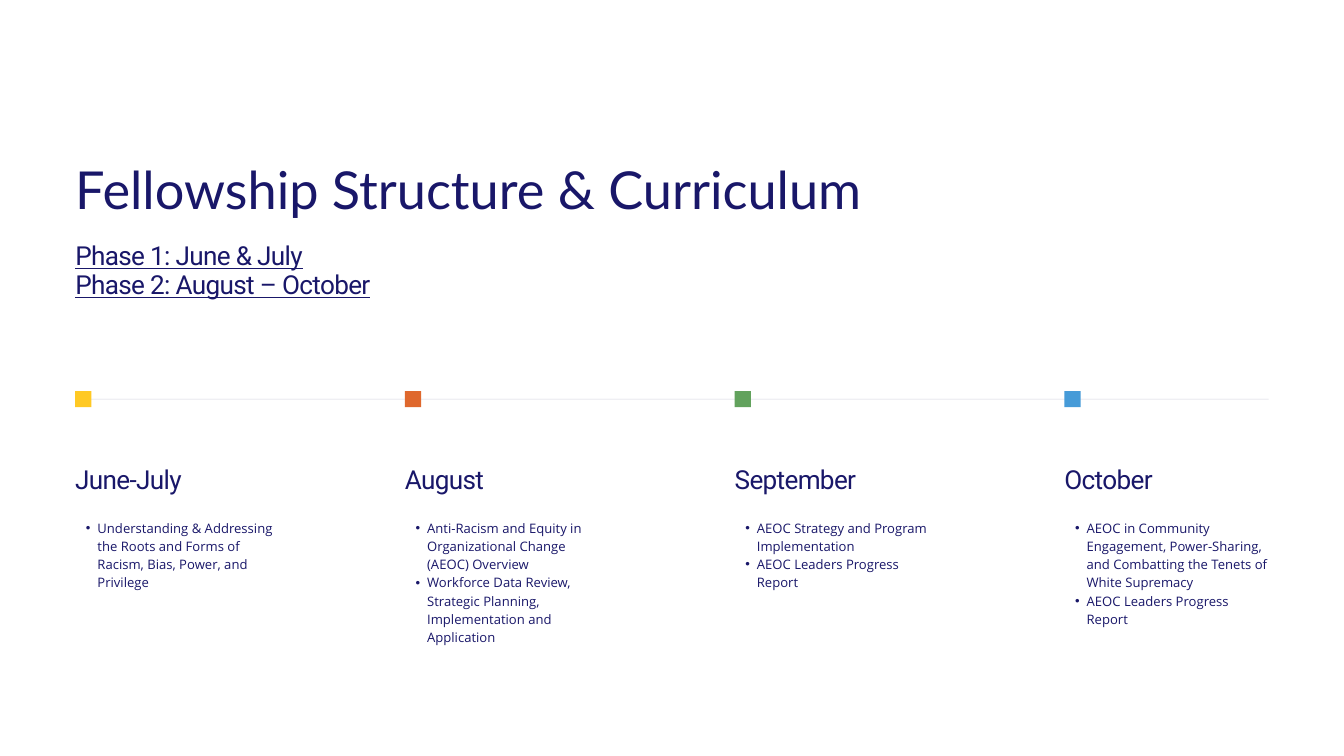
from lxml.etree import SubElement
from pptx import Presentation
from pptx.dml.color import RGBColor
from pptx.enum.shapes import MSO_SHAPE
from pptx.enum.text import MSO_AUTO_SIZE
from pptx.oxml.ns import qn
from pptx.util import Inches, Pt

TITLE = "Fellowship Structure & Curriculum"
PHASES = ["Phase 1: June & July", "Phase 2: August – October"]

# month, marker colour, height of the topic list, topics
STAGES = [
    ("June-July", "FFC924", 1.1, [
        "Understanding & Addressing the Roots and Forms of Racism, Bias, Power, and Privilege",
    ]),
    ("August", "DF682D", 1.94, [
        "Anti-Racism and Equity in Organizational Change (AEOC) Overview ",
        "Workforce Data Review, Strategic Planning, Implementation and Application",
    ]),
    ("September", "62A25D", 1.1, [
        "AEOC Strategy and Program Implementation",
        "AEOC Leaders Progress Report",
    ]),
    ("October", "469BD8", 1.66, [
        "AEOC in Community Engagement, Power-Sharing, and Combatting the Tenets of White Supremacy",
        "AEOC Leaders Progress Report",
    ]),
]

THEME = {
    "ink": "191769",
    "rail": "29285D",
    "title": {"font": "Lato", "size": 56, "lead": 55.4},
    "phase": {"font": "Roboto", "size": 28, "lead": 31.1, "track": -0.7, "under": True},
    "month": {"font": "Roboto", "size": 28, "lead": 35.8, "track": -0.7},
    "topic": {"font": "Open Sans", "size": 14, "lead": 19.6, "bullet": "•"},
}

LEFT, WIDE = 1.12, 17.76
COL = 3.04
STEP = (WIDE - COL) / (len(STAGES) - 1)
MARK, MARK_TOP = 0.24, 5.82
RAIL = 0.01


def add_text(shapes, box, lines, font, size, lead, track=0, under=None, bullet=None):
    """Add a text box at box (left, top, width, height), one paragraph a line."""
    frame = shapes.add_textbox(*map(Inches, box)).text_frame
    frame.word_wrap = True
    frame.auto_size = MSO_AUTO_SIZE.SHAPE_TO_FIT_TEXT
    frame.margin_left = frame.margin_right = frame.margin_top = frame.margin_bottom = 0
    for i, line in enumerate(lines):
        para = frame.add_paragraph() if i else frame.paragraphs[0]
        para.line_spacing = Pt(lead)
        run = para.add_run()
        run.text = line
        run.font.name, run.font.size, run.font.underline = font, Pt(size), under
        run.font.color.rgb = RGBColor.from_string(THEME["ink"])
        if track:
            run.font._element.set("spc", str(round(track * 100)))
        if bullet:
            para.level = 1
            props = para._p.get_or_add_pPr()
            props.set("marL", str(Inches(0.33)))
            props.set("indent", str(Inches(-0.17)))
            SubElement(props, qn("a:buFont"), typeface="Arial")
            SubElement(props, qn("a:buChar"), char=bullet)


def add_block(shapes, box, color, alpha=None):
    block = shapes.add_shape(MSO_SHAPE.RECTANGLE, *map(Inches, box))
    block.shadow.inherit = False
    block.line.fill.background()
    block.fill.solid()
    block.fill.fore_color.rgb = RGBColor.from_string(color)
    if alpha is not None:
        tint = block._element.spPr.find(qn("a:solidFill"))[0]
        SubElement(tint, qn("a:alpha"), val=str(alpha * 1000))


def main():
    deck = Presentation()
    deck.slide_width, deck.slide_height = Inches(20), Inches(11.25)
    shapes = deck.slides.add_slide(deck.slide_layouts[6]).shapes

    add_block(shapes, (LEFT, MARK_TOP + (MARK - RAIL) / 2, WIDE, RAIL), THEME["rail"], alpha=20)

    head = shapes.add_group_shape().shapes
    add_text(head, (LEFT, 2.5, 12.37, 0.83), [TITLE], **THEME["title"])
    add_text(head, (LEFT, 3.6, 8.19, 0.87), PHASES, **THEME["phase"])

    for i, (month, color, tall, topics) in enumerate(STAGES):
        x = LEFT + i * STEP
        stage = shapes.add_group_shape().shapes
        add_block(stage, (x, MARK_TOP, MARK, MARK), color)
        add_text(stage, (x, 6.87, COL, 0.48), [month], **THEME["month"])
        add_text(stage, (x, 7.7, COL, tall), topics, **THEME["topic"])

    deck.save("out.pptx")


if __name__ == "__main__":
    main()
